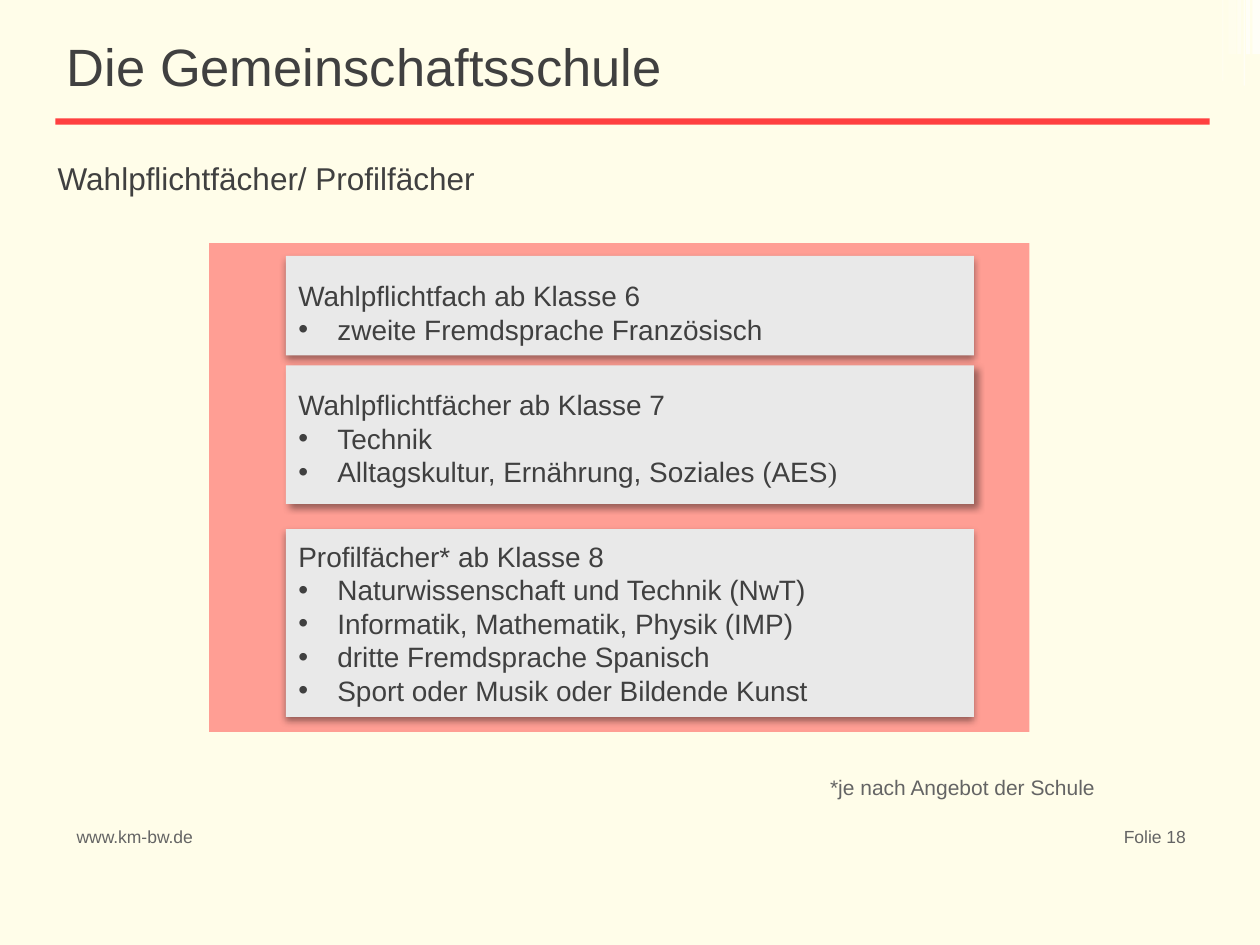
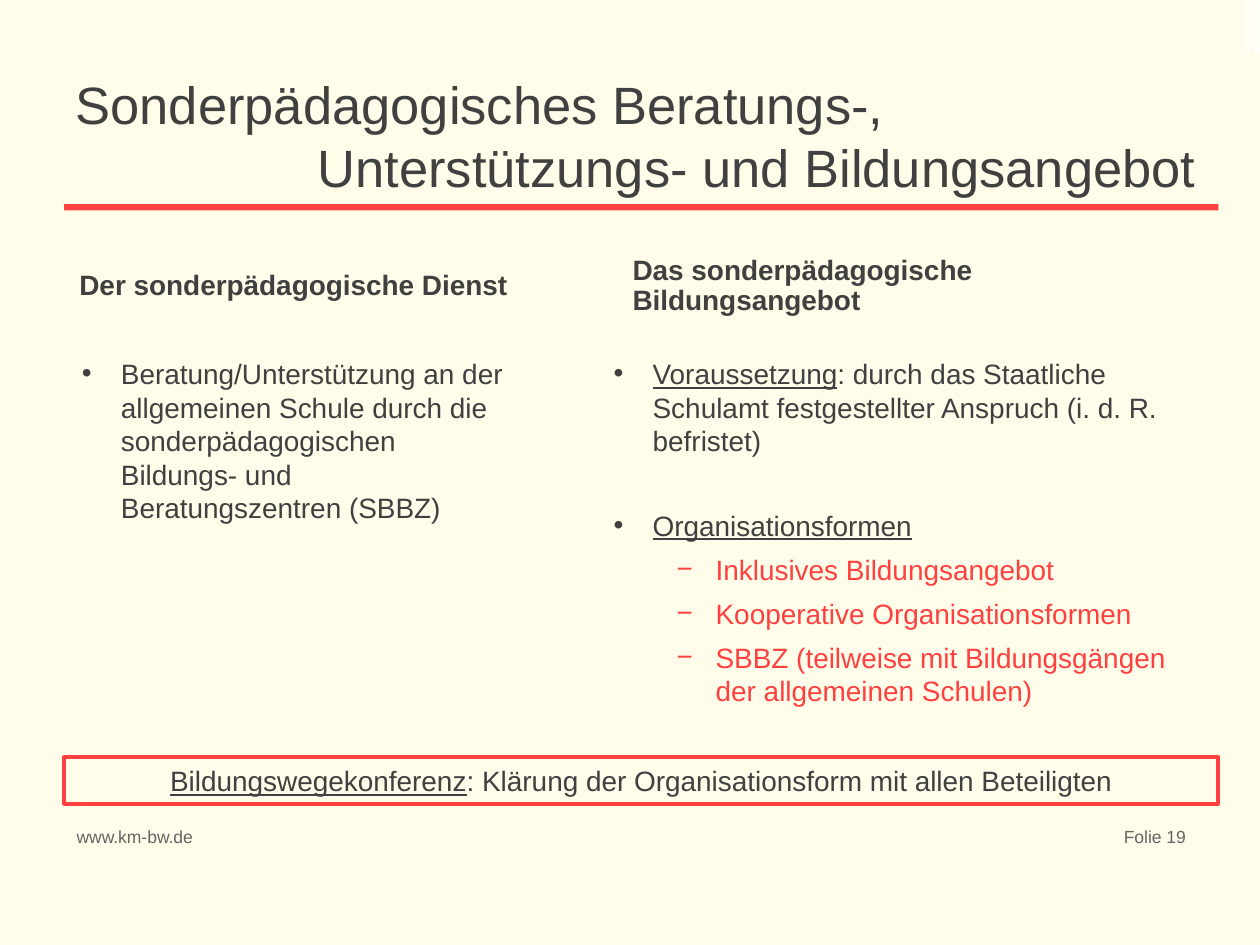
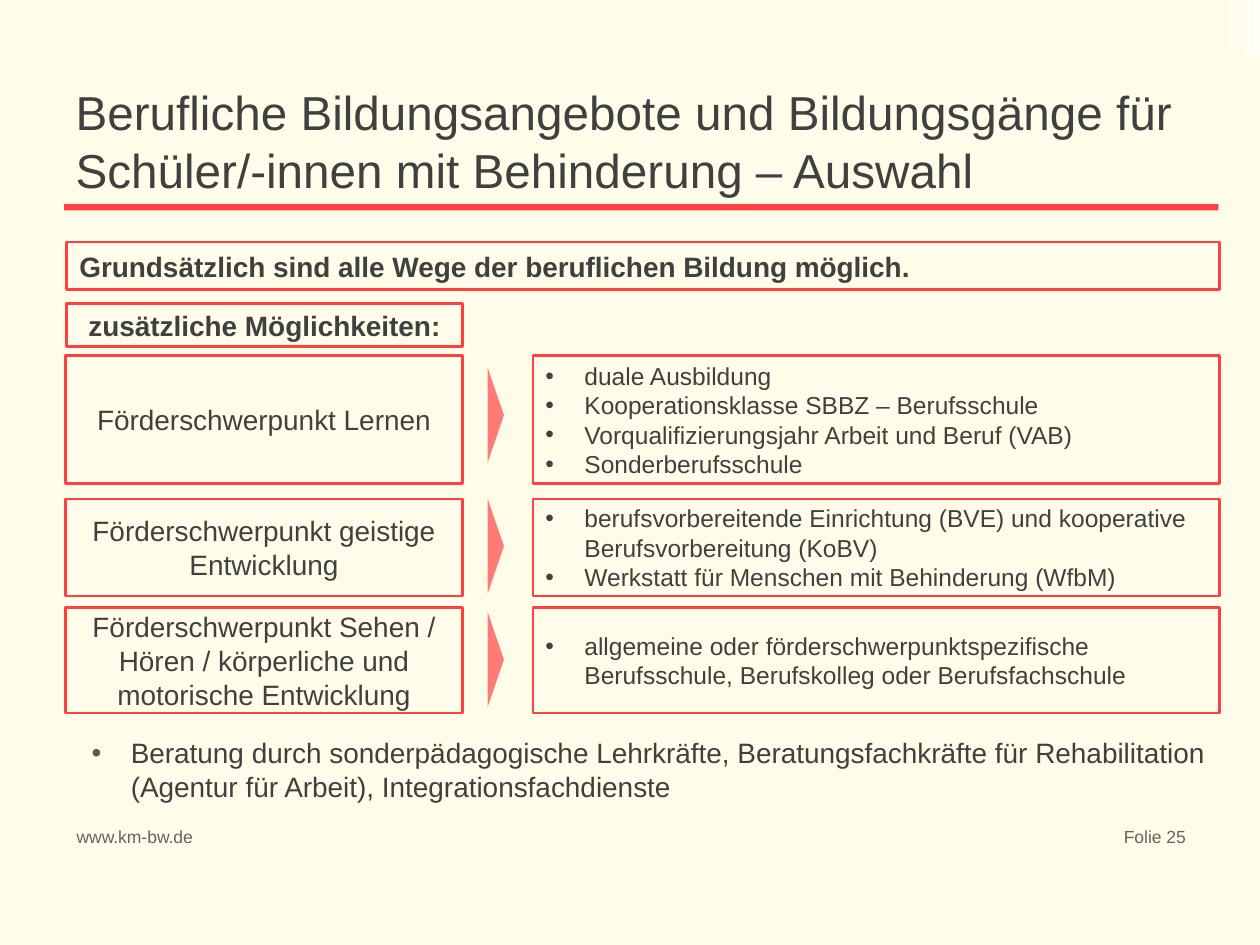
"""Build three slides on school types and vocational paths for pupils with disabilities."""
from lxml import etree
from pptx import Presentation
from pptx.dml.color import RGBColor
from pptx.enum.shapes import MSO_SHAPE
from pptx.enum.text import MSO_ANCHOR, MSO_AUTO_SIZE, PP_ALIGN
from pptx.oxml.ns import qn
from pptx.util import Inches, Pt

RECTANGLE, ARROW = MSO_SHAPE.RECTANGLE, MSO_SHAPE.PENTAGON
TOP, MIDDLE = MSO_ANCHOR.TOP, MSO_ANCHOR.MIDDLE
LEFT, CENTER, RIGHT = PP_ALIGN.LEFT, PP_ALIGN.CENTER, PP_ALIGN.RIGHT
NO_AUTOFIT = MSO_AUTO_SIZE.NONE

COLUMNS, ROWS = 100, 75
UNIT = Inches(10) // COLUMNS
CREAM, RED, GREY, WHITE, BLACK = "FFFDE9", "FF4040", "E9E9E9", "FFFFFF", "000000"
TEXT, MUTED, BULLET_GREY = "404040", "646464", "595959"
FONT = "Arial"
HANGING = 3.1
INDENTS = {"•": HANGING, "−": 8.1}
STRIPES = [(98.9, 0.3, 4.3, 65), (99.4, 0.6, 4.3, 65), (97, 0.1, 6.4, 30),
           (98.7, 0.1, 6.8, 60), (97.5, 0.6, 4.3, 20), (98.2, 0.3, 4.3, 40)]


def draw(slide, grid, fill=None, alpha=100, line=0, kind=RECTANGLE):
    """Add a shape at grid (column, row, columns, rows) with flat fill and red outline."""
    shape = slide.shapes.add_shape(kind, *[round(UNIT * length) for length in grid])
    shape.shadow.inherit = False
    if fill:
        shape.fill.solid()
        shape.fill.fore_color.rgb = RGBColor.from_string(fill)
        color = shape.element.spPr.find(".//" + qn("a:srgbClr"))
        etree.SubElement(color, qn("a:alpha"), val=str(alpha * 1000))
    else:
        shape.fill.background()
    if line:
        shape.line.color.rgb = RGBColor.from_string(RED)
        shape.line.width = Pt(line)
    else:
        shape.line.fill.background()
    return shape


def write(shape, lines, size=16, color=TEXT, bold=False, align=LEFT, anchor=MIDDLE,
          grid=None, insets=(1, 0.5), after=0, bullet_color=None):
    """Fill a shape with lines; a leading mark makes a bullet and | divides runs."""
    if grid:
        shape.left, shape.top, shape.width, shape.height = [round(UNIT * length) for length in grid]
    frame = shape.text_frame
    frame.auto_size, frame.word_wrap, frame.vertical_anchor = NO_AUTOFIT, True, anchor
    frame.margin_left = frame.margin_right = round(UNIT * insets[0])
    frame.margin_top = frame.margin_bottom = round(UNIT * insets[1])
    frame.text = "\n".join(lines)
    for paragraph, content in zip(frame.paragraphs, lines):
        mark = content[0] if content[0] in INDENTS else None
        first, *others = content.lstrip("•− ").split("|")
        paragraph.text = first
        for part in others:
            paragraph.add_run().text = part
        properties = paragraph._p.get_or_add_pPr()
        properties.set("marL", str(round(UNIT * INDENTS.get(mark, 0))))
        properties.set("indent", str(round(UNIT * -HANGING) if mark else 0))
        if mark:
            bullet = etree.SubElement(properties, qn("a:buClr"))
            etree.SubElement(bullet, qn("a:srgbClr"), val=bullet_color or (RED if mark == "−" else color))
            etree.SubElement(properties, qn("a:buFont"), typeface=FONT)
            etree.SubElement(properties, qn("a:buChar"), char=mark)
        else:
            etree.SubElement(properties, qn("a:buNone"))
        paragraph.alignment = align
        paragraph.space_before, paragraph.space_after = Pt(0), Pt(after)
        for run in paragraph.runs:
            run.font.name, run.font.size, run.font.bold = FONT, Pt(size), bold
            run.font.color.rgb = RGBColor.from_string(RED if mark == "−" else color)
    return frame.paragraphs


presentation = Presentation()
presentation.slide_width, presentation.slide_height = UNIT * COLUMNS, UNIT * ROWS
background = presentation.slide_master.background.fill
background.solid()
background.fore_color.rgb = RGBColor.from_string(CREAM)

slides = []
for layout, number, title, size, title_grid, rule in [
    (5, 18, ["Die Gemeinschaftsschule"], 30, (4.3, 2.6, 90, 5.2), (4.4, 9.4)),
    (4, 19, ["Sonderpädagogisches Beratungs-,", "Unterstützungs- und Bildungsangebot"],
     30, (5, 6.1, 91.7, 9.3), (5.1, 16.2)),
    (1, 25, ["Berufliche Bildungsangebote und Bildungsgänge für Schüler/-innen mit Behinderung – Auswahl"],
     27.2, (5, 6.1, 90, 10.1), (5.1, 16.2)),
]:
    slide = presentation.slides.add_slide(presentation.slide_layouts[layout])
    for left, width, height, alpha in STRIPES:
        draw(slide, (left, 0, width, height), WHITE, alpha)
    write(slide.shapes.title, title, size, grid=title_grid)
    draw(slide, (*rule, 91.6, 0.5), RED)
    write(draw(slide, (5.1, 65.1, 13.3, 3.9)), ["www.km-bw.de"], 10, MUTED, anchor=TOP)
    write(draw(slide, (85.4, 65.1, 9.7, 3.9)), [f"Folie {number}"], 10, MUTED, align=RIGHT, anchor=TOP)
    slides.append(slide)
subjects, support, vocational = slides

write(draw(subjects, (3.6, 12.1, 40, 4)), ["Wahlpflichtfächer/ Profilfächer"], 18)
draw(subjects, (16.6, 19.3, 65.1, 38.8), RED, 50)
for top, height, spacing, distance, direction, lines in [
    (20.3, 7.9, 1.4, 2, 90, ["Wahlpflichtfach ab Klasse 6", "• zweite Fremdsprache Französisch"]),
    (29, 11, 1.2, 3, 45, ["Wahlpflichtfächer ab Klasse 7", "• Technik",
                          "• Alltagskultur, Ernährung, Soziales (AES|)"]),
    (42, 14.9, 1, 2, 90, ["Profilfächer* ab Klasse 8", "• Naturwissenschaft und Technik (NwT)",
                          "• Informatik, Mathematik, Physik (IMP)", "• dritte Fremdsprache Spanisch",
                          "• Sport oder Musik oder Bildende Kunst"]),
]:
    card = draw(subjects, (22.7, top, 54.6, height), GREY)
    shadow = etree.SubElement(card.element.spPr.find(qn("a:effectLst")), qn("a:outerShdw"),
                              blurRad=str(Pt(4)), dist=str(Pt(distance)), dir=str(direction * 60000),
                              algn="ctr", rotWithShape="0")
    shade = etree.SubElement(shadow, qn("a:srgbClr"), val=BLACK)
    etree.SubElement(shade, qn("a:alpha"), val="40000")
    paragraphs = write(card, lines)
    paragraphs[0].line_spacing = spacing
    for run in paragraphs[-1].runs[1:]:
        run.font.name = "Times New Roman"
write(draw(subjects, (64.9, 61, 25, 3)), ["*je nach Angebot der Schule"], 12, MUTED)

support.shapes.title.text_frame.paragraphs[1]._p.get_or_add_pPr().set("marL", str(round(UNIT * 19.2)))
for index, grid, inset, heading in [
    (1, (5.1, 19.2, 39.8, 7.1), 1.2, "Der sonderpädagogische Dienst"),
    (3, (47.4, 19.2, 49.4, 7.1), 2.8, "Das sonderpädagogische Bildungsangebot"),
]:
    paragraphs = write(support.placeholders[index], [heading], bold=True, grid=grid, insets=(inset, 0))
    paragraphs[0].line_spacing = 0.9
write(support.placeholders[2],
      ["• Beratung/Unterstützung an der allgemeinen Schule durch die sonderpädagogischen "
       "Bildungs- und Beratungszentren (SBBZ)"],
      grid=(5.3, 26.9, 37, 16.9), insets=(1.2, 1.4), anchor=TOP)
requirement, forms, *options = write(
    support.placeholders[4],
    ["• Voraussetzung|: durch das Staatliche Schulamt festgestellter Anspruch (i. d. R. befristet)",
     "• Organisationsformen", "− Inklusives Bildungsangebot", "− Kooperative Organisationsformen",
     "− SBBZ (teilweise mit Bildungsgängen der allgemeinen Schulen)"],
    grid=(47.5, 26.9, 49.3, 34), insets=(1.2, 1.4), anchor=TOP, after=6)
forms.space_before = Pt(23)
conference = write(draw(support, (5.1, 60.1, 91.6, 3.7), line=2.25),
                   ["Bildungswegekonferenz|: Klärung der Organisationsform mit allen Beteiligten"], align=CENTER)
for paragraph in (requirement, forms, conference[0]):
    paragraph.runs[0].font.underline = True

principle = vocational.placeholders[1]
write(principle, ["Grundsätzlich sind alle Wege der beruflichen Bildung möglich."], bold=True,
      grid=(5.3, 19.2, 91.5, 3.8))
principle.line.color.rgb = RGBColor.from_string(RED)
principle.line.width = Pt(1.5)
write(draw(vocational, (5.3, 24.1, 31.4, 3.4), line=1.5), ["zusätzliche Möglichkeiten:"], bold=True, align=CENTER)
for top, height, arrow_top, focus, paths in [
    (28.2, 10.2, 29.2, "Förderschwerpunkt Lernen",
     ["• duale Ausbildung", "• Kooperationsklasse SBBZ – Berufsschule",
      "• Vorqualifizierungsjahr Arbeit und Beruf (VAB)", "• Sonderberufsschule"]),
    (39.6, 7.7, 39.6, "Förderschwerpunkt geistige Entwicklung",
     ["• berufsvorbereitende Einrichtung (BVE) und kooperative Berufsvorbereitung (KoBV)",
      "• Werkstatt für Menschen mit Behinderung (WfbM)"]),
    (48.2, 8.4, 48.6, "Förderschwerpunkt Sehen / Hören / körperliche und motorische Entwicklung",
     ["• allgemeine oder förderschwerpunktspezifische Berufsschule, Berufskolleg oder Berufsfachschule"]),
]:
    write(draw(vocational, (5.2, top, 31.5, height), line=1.5), [focus], align=CENTER)
    write(draw(vocational, (42.3, top, 54.5, height), line=1.5), paths, 14)
    arrow = draw(vocational, (38.7, arrow_top, 1.3, 7.5), RED, 68, kind=ARROW)
    arrow.adjustments[0] = 0.99
advice = write(draw(vocational, (5.1, 57.9, 92, 6)),
               ["• Beratung durch sonderpädagogische Lehrkräfte, Beratungsfachkräfte für Rehabilitation "
                "(Agentur für Arbeit), Integrationsfachdienste"], anchor=TOP, bullet_color=BULLET_GREY)
advice[0]._p.get_or_add_pPr().set("marL", str(round(UNIT * 4.3)))

presentation.save("out.pptx")
